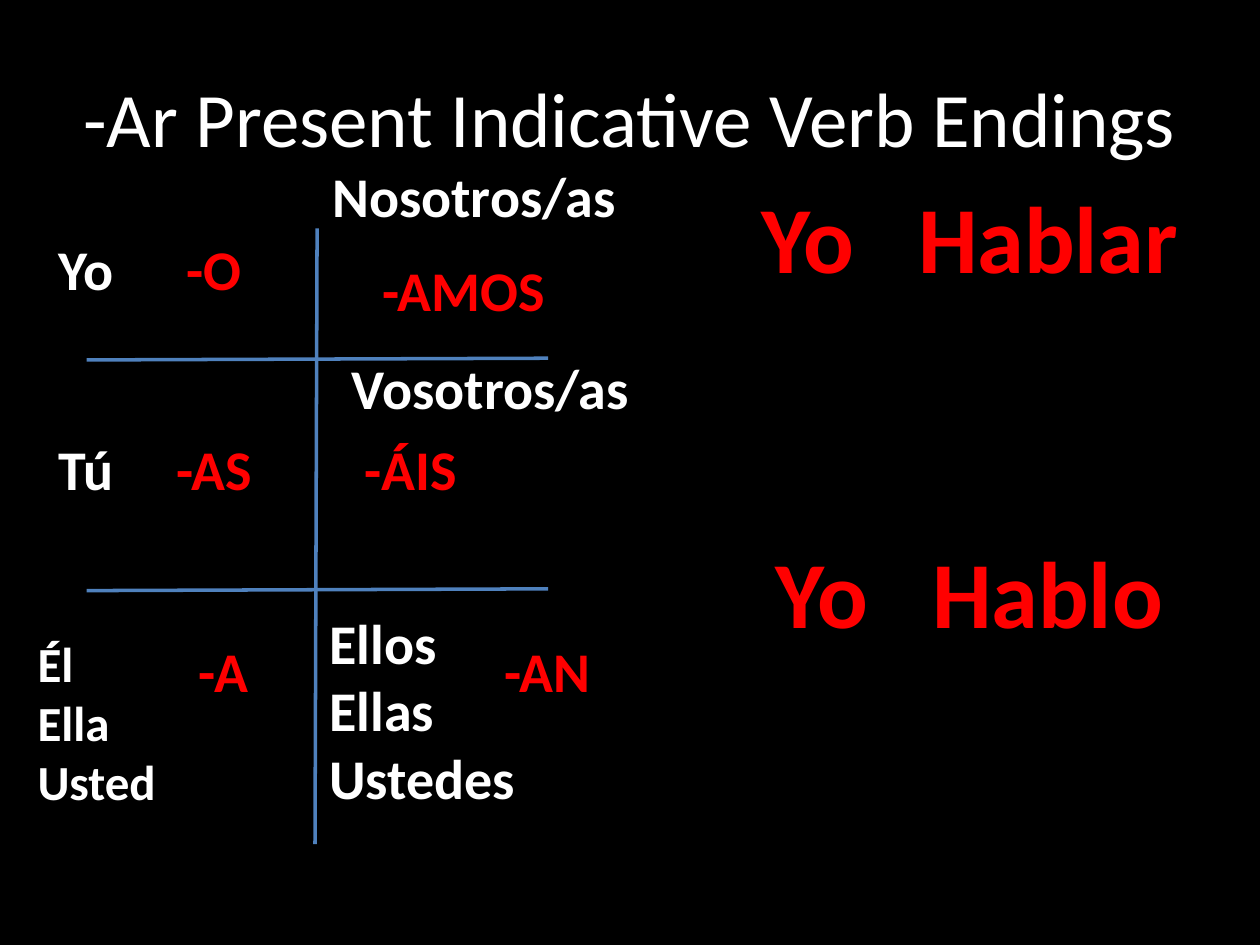
import pptx
import pptx.util
import pptx.dml.color
import pptx.enum.shapes
import pptx.enum.text
import pptx.oxml.ns
import lxml.etree

Pt = pptx.util.Pt
RGB = pptx.dml.color.RGBColor
ALIGN = pptx.enum.text.PP_ALIGN
ANCHOR = pptx.enum.text.MSO_ANCHOR
FIT = pptx.enum.text.MSO_AUTO_SIZE

BLACK = RGB(0x00, 0x00, 0x00)
WHITE = RGB(0xFF, 0xFF, 0xFF)
RED = RGB(0xFF, 0x00, 0x00)
BLUE = RGB(0x4F, 0x81, 0xBD)
FONT = "Calibri"


def add_text(slide, text, left, top, width, height, size=32, color=WHITE,
             bold=True, align=ALIGN.CENTER, anchor=ANCHOR.TOP,
             wrap=False, fit=FIT.SHAPE_TO_FIT_TEXT):
    """Add a text box; each line of the text is a paragraph."""
    box = slide.shapes.add_textbox(Pt(left), Pt(top), Pt(width), Pt(height))
    frame = box.text_frame
    frame.word_wrap = wrap
    frame.auto_size = fit
    frame.vertical_anchor = anchor
    frame.text = text
    for para in frame.paragraphs:
        para.alignment = align
        font = para.runs[0].font
        font.name = FONT
        font.size = Pt(size)
        font.bold = bold
        font.color.rgb = color


def add_line(slide, x1, y1, x2, y2):
    """Add a grid line without a shadow."""
    kind = pptx.enum.shapes.MSO_CONNECTOR.STRAIGHT
    line = slide.shapes.add_connector(kind, Pt(x1), Pt(y1), Pt(x2), Pt(y2))
    line.line.color.rgb = BLUE
    line.line.width = Pt(2)
    props = line._element.spPr
    lxml.etree.SubElement(props, pptx.oxml.ns.qn("a:effectLst"))


def main():
    deck = pptx.Presentation()
    deck.slide_width = Pt(720)
    deck.slide_height = Pt(540)
    slide = deck.slides.add_slide(deck.slide_layouts[6])
    fill = slide.background.fill
    fill.solid()
    fill.fore_color.rgb = BLACK

    # Title
    add_text(slide, "-Ar Present Indicative Verb Endings", 36, 21.6, 648, 90,
             size=44, bold=False, anchor=ANCHOR.MIDDLE, wrap=True,
             fit=FIT.NONE)

    # Grid of the six persons
    add_line(slide, 181.2, 130.5, 180, 482.4)
    for y in (205.7, 337.5):
        add_line(slide, 49.5, y, 313.2, y - 1)

    # Pronouns
    for text, left, top, width in (
            ("Yo", 24.5, 130.5, 49.7),
            ("Tú", 25.2, 244.8, 47.5),
            ("Nosotros/as", 181.2, 88.5, 179.3),
            ("Vosotros/as", 191.5, 198.7, 177.1)):
        add_text(slide, text, left, top, width, 46)
    add_text(slide, "Él\nElla\nUsted", 14.4, 358.6, 83.5, 108.7,
             size=28, align=ALIGN.LEFT)
    add_text(slide, "Ellos\nEllas\nUstedes", 181.2, 344.2, 122.4, 123.8,
             align=ALIGN.LEFT)

    # Endings
    for text, left, top, width in (
            ("-O", 99.4, 130.5, 46),
            ("-AS", 92.9, 244.8, 59),
            ("-A", 105.8, 360, 44),
            ("-AMOS", 181.2, 142.6, 167.8),
            ("-ÁIS", 200.9, 244.8, 67.7),
            ("-AN", 280, 360, 65.5)):
        add_text(slide, text, left, top, width, 46, color=RED)

    # Example
    for text, left, top, width in (
            ("Yo   Hablar", 424.8, 98.6, 259.2),
            ("Yo   Hablo", 432.7, 301.7, 242.6)):
        add_text(slide, text, left, top, width, 72.7, size=54, color=RED)

    deck.save("out.pptx")


if __name__ == "__main__":
    main()
